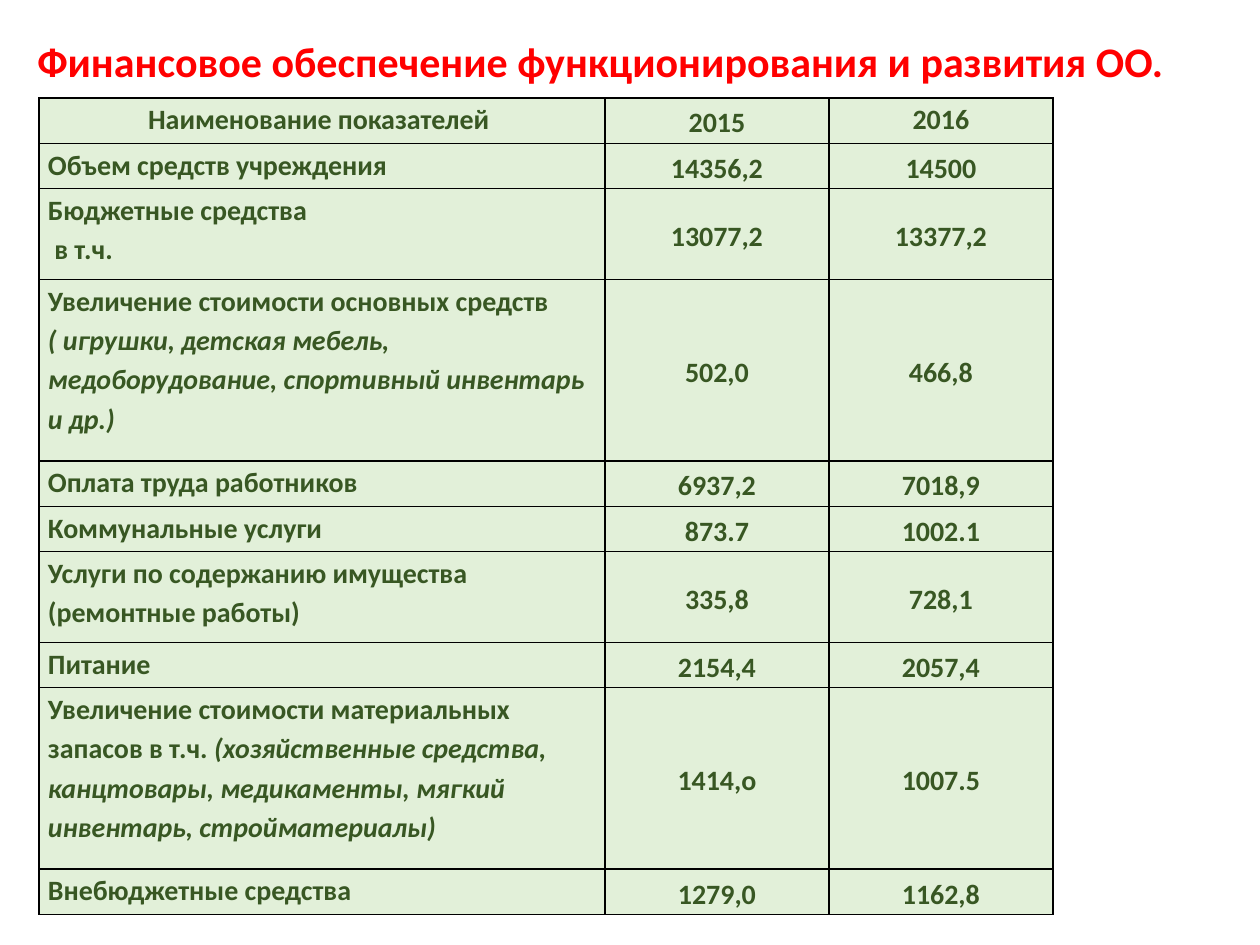
"""Build a slide with a table of the funding of a school."""
from lxml import etree
from pptx import Presentation
from pptx.dml.color import RGBColor
from pptx.enum.text import MSO_ANCHOR, MSO_AUTO_SIZE, PP_ALIGN
from pptx.oxml.ns import qn
from pptx.util import Pt

PX = 914400 // 126
FONT = "Calibri"
RED, GREEN, PALE, BLACK = "FF0000", "385723", "E2F0D9", "000000"
LEFT, CENTER = PP_ALIGN.LEFT, PP_ALIGN.CENTER
TOP, MIDDLE = MSO_ANCHOR.TOP, MSO_ANCHOR.MIDDLE
FIXED = MSO_AUTO_SIZE.NONE

TITLE = "Финансовое обеспечение функционирования и развития ОО."
BOX = (0, 29, 1201, 63)
GRID = (39, 98, 1014, 817)
COLS = (566, 224, 224)
PADS = (9, 9, 1)

# Each row: height in lines, paragraphs of (plain, italic) text, two values
ROWS = [
    (1, [("Наименование показателей ", "")], "2015", "2016"),
    (1, [("Объем средств учреждения", "")], "14356,2", "14500"),
    (2, [("Бюджетные средства", ""), (" в т.ч.", "")], "13077,2", "13377,2"),
    (4, [("Увеличение стоимости основных средств", ""),
         ("", "( игрушки, детская мебель, медоборудование, "
              "спортивный инвентарь и др.)")], "502,0", "466,8"),
    (1, [("Оплата труда работников", "")], "6937,2", "7018,9"),
    (1, [("Коммунальные услуги", "")], "873.7", "1002.1"),
    (2, [("Услуги по содержанию имущества (ремонтные работы)", "")],
     "335,8", "728,1"),
    (1, [("Питание", "")], "2154,4", "2057,4"),
    (4, [("Увеличение стоимости материальных запасов в т.ч. ",
          "(хозяйственные средства, канцтовары, медикаменты, "
          "мягкий инвентарь, стройматериалы)")], "1414,о", "1007.5"),
    (1, [("Внебюджетные средства", "")], "1279,0", "1162,8"),
]


def color(code):
    return RGBColor.from_string(code)


def style(run, size, code, slant=False):
    font = run.font
    font.name, font.size, font.bold = FONT, Pt(size), True
    font.italic = slant
    font.color.rgb = color(code)


def border(cell):
    props = cell._tc.get_or_add_tcPr()
    for spot, side in enumerate(("lnL", "lnR", "lnT", "lnB")):
        line = etree.Element(qn("a:" + side), w=str(Pt(1)))
        fill = etree.SubElement(line, qn("a:solidFill"))
        etree.SubElement(fill, qn("a:srgbClr"), val=BLACK)
        props.insert(spot, line)


def write(cell, paras, align, anchor, pad):
    cell.margin_left = cell.margin_right = pad * PX
    cell.margin_top = cell.margin_bottom = 0
    cell.vertical_anchor = anchor
    cell.fill.solid()
    cell.fill.fore_color.rgb = color(PALE)
    border(cell)
    frame = cell.text_frame
    for spot, parts in enumerate(paras):
        para = frame.add_paragraph() if spot else frame.paragraphs[0]
        para.alignment, para.line_spacing = align, 1.15
        for slant, text in enumerate(parts):
            if text:
                run = para.add_run()
                run.text = text
                style(run, 16, GREEN, bool(slant))


def head(slide):
    title = slide.shapes.title
    title.left, title.top, title.width, title.height = (n * PX for n in BOX)
    frame = title.text_frame
    frame.text = TITLE
    frame.word_wrap, frame.auto_size = True, FIXED
    frame.vertical_anchor = TOP
    para = frame.paragraphs[0]
    para.alignment = CENTER
    style(para.runs[0], 24, RED)


def grid(slide):
    place = [n * PX for n in GRID]
    table = slide.shapes.add_table(len(ROWS), len(COLS), *place).table
    table.first_row = table.horz_banding = False
    for col, width in zip(table.columns, COLS):
        col.width = width * PX
    unit = place[3] // sum(row[0] for row in ROWS)
    for r, (lines, label, *values) in enumerate(ROWS):
        table.rows[r].height = lines * unit
        texts = [label] + [[(value, "")] for value in values]
        for c, paras in enumerate(texts):
            align = LEFT if r and c == 0 else CENTER
            anchor = TOP if c == 0 or (r, c) == (0, 2) else MIDDLE
            write(table.cell(r, c), paras, align, anchor, PADS[c])


def main():
    deck = Presentation()
    deck.slide_width, deck.slide_height = 1260 * PX, 945 * PX
    slide = deck.slides.add_slide(deck.slide_layouts[5])
    head(slide)
    grid(slide)
    deck.save("out.pptx")


if __name__ == "__main__":
    main()
